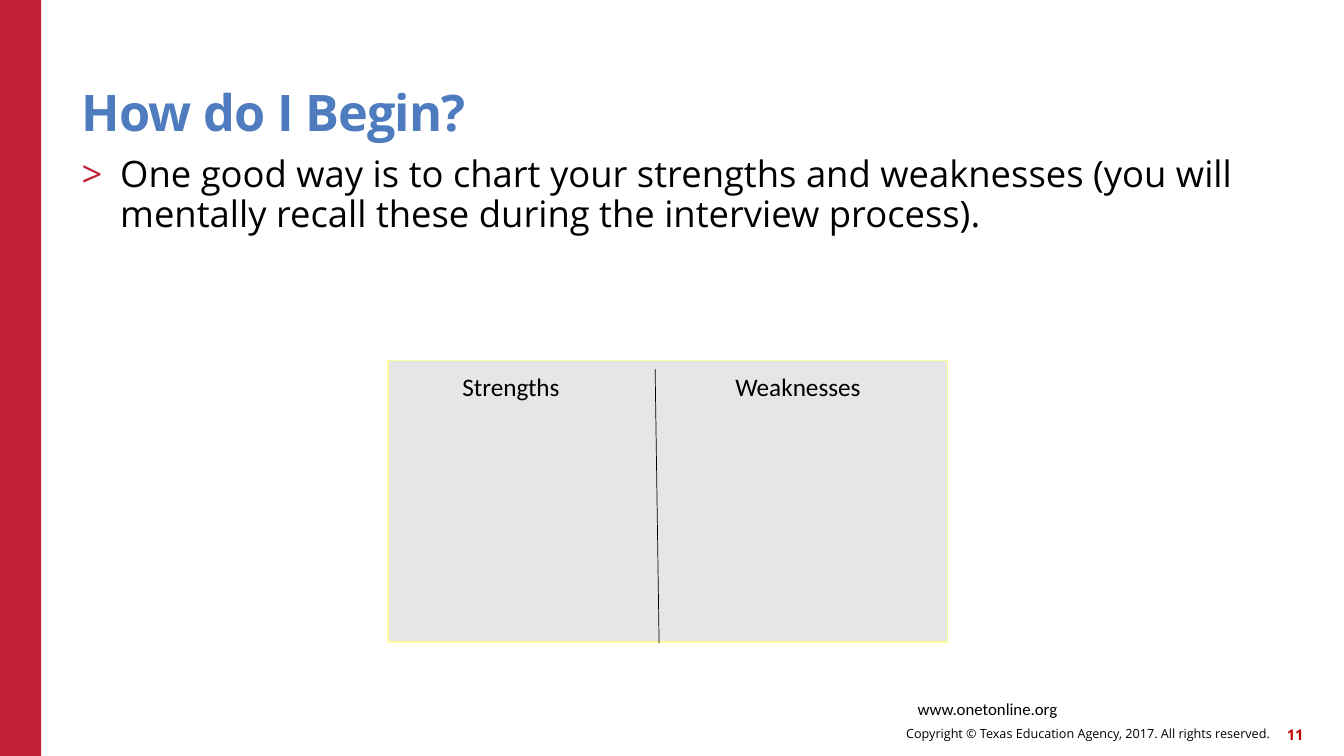
from pptx import Presentation
from pptx.dml.color import RGBColor
from pptx.enum.shapes import MSO_CONNECTOR, MSO_SHAPE
from pptx.enum.text import MSO_ANCHOR, MSO_AUTO_SIZE, PP_ALIGN
from pptx.oxml import parse_xml
from pptx.oxml.ns import nsdecls
from pptx.util import Cm, Pt

RED = RGBColor(0xC0, 0x20, 0x33)
DARK = RGBColor(0xC0, 0x00, 0x00)
BLUE = RGBColor(0x4E, 0x7C, 0xBE)
BLACK = RGBColor(0, 0, 0)
GREY = RGBColor(0xE6, 0xE6, 0xE6)
YELLOW = RGBColor(0xFF, 0xFF, 0x99)


def add_tag(node, xml):
    head, tail = xml.split(" ", 1)
    node.append(parse_xml(f"<{head} {nsdecls('a')} {tail}"))


def write(box, text, size=12, font="Open Sans", color=BLACK, bold=False,
          align=PP_ALIGN.LEFT, anchor=MSO_ANCHOR.TOP, inset=(0, 0),
          lead=1, track=None, bullet=None, tabs=()):
    frame = box.text_frame
    frame.word_wrap = True
    frame.auto_size = MSO_AUTO_SIZE.NONE
    frame.vertical_anchor = anchor
    frame.margin_left = frame.margin_right = Cm(inset[0])
    frame.margin_top = frame.margin_bottom = Cm(inset[1])
    para = frame.paragraphs[0]
    para.alignment = align
    para.line_spacing = lead
    para.space_before = Pt(0)
    props = para._p.get_or_add_pPr()
    if bullet:
        props.set("marL", str(Cm(0.97)))
        props.set("indent", str(-Cm(0.97)))
        add_tag(props, f'a:buClr ><a:srgbClr val="{RED}"/></a:buClr>')
        add_tag(props, f'a:buFont typeface="{font}"/>')
        add_tag(props, f'a:buChar char="{bullet}"/>')
    if tabs:
        stops = "".join(f'<a:tab pos="{Cm(x)}" algn="ctr"/>' for x in tabs)
        add_tag(props, f"a:tabLst >{stops}</a:tabLst>")
    run = para.add_run()
    run.text = text
    run.font.name = font
    run.font.size = Pt(size)
    run.font.bold = bold
    run.font.color.rgb = color
    if track:
        run._r.get_or_add_rPr().set("spc", str(track))


class Page:
    pad = (0.25, 0.13)
    plain = "Calibri"

    def __init__(self, deck):
        self.slide = deck.slides.add_slide(deck.slide_layouts[1])
        self.shapes = self.slide.shapes

    def holder(self, index, area, text, **form):
        box = self.slide.placeholders[index]
        box.left, box.top, box.width, box.height = map(Cm, area)
        write(box, text, **form)

    def label(self, area, text, **form):
        write(self.shapes.add_textbox(*map(Cm, area)), text, **form)

    def block(self, area, fill, edge=None):
        box = self.shapes.add_shape(MSO_SHAPE.RECTANGLE, *map(Cm, area))
        box.shadow.inherit = False
        box.fill.solid()
        box.fill.fore_color.rgb = fill
        if edge:
            box.line.color.rgb = edge
            box.line.width = Pt(1)
        else:
            box.line.fill.background()

    def rule(self, ends):
        line = self.shapes.add_connector(MSO_CONNECTOR.STRAIGHT, *map(Cm, ends))
        line.line.color.rgb = BLACK
        line.line.width = Pt(0.5)
        add_tag(line._element.spPr, "a:effectLst />")


def main():
    deck = Presentation()
    deck.slide_width, deck.slide_height = Cm(33.87), Cm(19.05)
    page = Page(deck)
    page.block((0, 0, 1.04, 19.05), RED)
    page.label((15.6, 18.08, 16.4, 0.81),
               "Copyright © Texas Education Agency, 2017. All rights reserved.",
               size=9, align=PP_ALIGN.RIGHT, anchor=MSO_ANCHOR.MIDDLE)
    page.label((31.78, 18.11, 1.07, 0.81), "11", size=10.5, color=DARK,
               bold=True, align=PP_ALIGN.RIGHT, anchor=MSO_ANCHOR.MIDDLE)
    page.holder(0, (2.06, 1.14, 27.94, 2.44), "How do I Begin?", size=36,
                color=BLUE, bold=True, anchor=MSO_ANCHOR.BOTTOM, lead=0.9,
                track=-60)
    page.holder(1, (2.06, 3.94, 30.71, 13.16),
                "One good way is to chart your strengths and weaknesses "
                "(you will mentally recall these during the interview process).",
                size=26, lead=0.9, bullet=">")
    page.label((13.56, 17.48, 13.34, 0.76), "www.onetonline.org",
               font=page.plain, align=PP_ALIGN.RIGHT, inset=page.pad)
    page.block((9.78, 9.09, 14.1, 7.09), GREY, YELLOW)
    page.rule((16.51, 9.3, 16.61, 16.21))
    page.label((9.68, 9.22, 14.17, 1.02), "\tStrengths\tWeaknesses", size=18,
               font=page.plain, inset=page.pad, tabs=(2.95, 10.18))
    deck.save("out.pptx")


if __name__ == "__main__":
    main()
